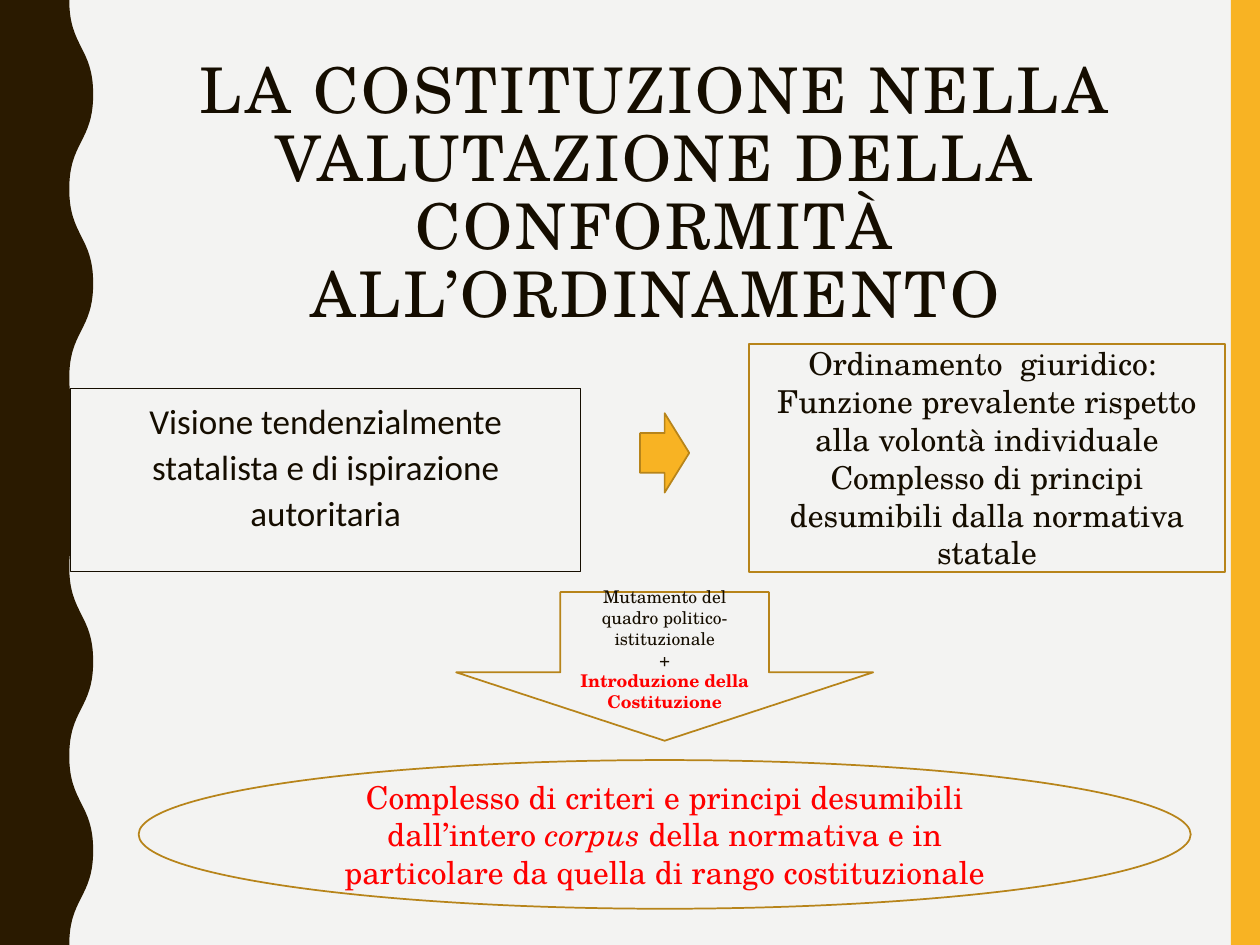
from dataclasses import dataclass
from typing import NamedTuple

from pptx import Presentation
from pptx.dml.color import RGBColor
from pptx.enum.shapes import MSO_SHAPE as Geometry
from pptx.enum.text import MSO_ANCHOR as Anchor, MSO_AUTO_SIZE as AutoSize, PP_ALIGN as Align
from pptx.oxml.ns import qn
from pptx.oxml.xmlchemy import OxmlElement
from pptx.util import Inches, Pt

SLIDE_W, SLIDE_H = Inches(10), Inches(7.5)
SERIF, SANS = "TeX Gyre Schola", "Calibri"
PAPER, INK, BROWN = "F3F3F2", "150D00", "2A1A00"
GOLD, DARK_GOLD, RED = "F8B323", "B7841A", "FF0000"


class Area(NamedTuple):
    """Left, top, width and height in percent of the slide."""
    left: float
    top: float
    width: float
    height: float

    def emu(self) -> list[int]:
        sides = (SLIDE_W, SLIDE_H, SLIDE_W, SLIDE_H)
        return [round(side * share / 100) for side, share in zip(sides, self)]


class Words(NamedTuple):
    text: str
    color: str = INK
    bold: bool = False
    italic: bool = False


@dataclass
class Block:
    geometry: Geometry
    area: Area
    paragraphs: tuple[tuple[Words, ...], ...] = ()
    size: float = 18
    fill: str = PAPER
    adjustments: tuple[float, ...] = ()


BLOCKS = [
    Block(Geometry.RIGHT_ARROW, Area(50.8, 43.73, 3.9, 8.4), fill=GOLD),
    Block(Geometry.RECTANGLE, Area(59.43, 36.37, 37.8, 24.13), (
        (Words("Ordinamento  giuridico: "),),
        (Words("Funzione prevalente rispetto alla volontà individuale"),),
        (Words("Complesso di principi desumibili dalla normativa statale"),),
    )),
    Block(Geometry.DOWN_ARROW, Area(36.2, 62.65, 33.1, 15.73), (
        (Words("Mutamento del quadro politico- istituzionale"),),
        (Words("+"),),
        (Words("Introduzione della Costituzione", RED, bold=True),),
    ), size=10, adjustments=(0.5, 0.46)),
    Block(Geometry.OVAL, Area(11, 80.43, 83.5, 15.73), (
        (Words("Complesso di criteri e principi desumibili dall’intero ", RED),
         Words("corpus ", RED, italic=True),
         Words("della normativa e in particolare da quella di rango costituzionale", RED)),
    )),
]


def rgb(value: str) -> RGBColor:
    return RGBColor.from_string(value)


def paint(shape, fill: str, line: str | None = None, width: float = 1) -> None:
    shape.fill.solid()
    shape.fill.fore_color.rgb = rgb(fill)
    if line:
        shape.line.color.rgb = rgb(line)
        shape.line.width = Pt(width)
    else:
        shape.line.fill.background()


def add_words(paragraph, words: Words, size: float, font: str = SERIF):
    run = paragraph.add_run()
    run.text = words.text
    run.font.name, run.font.size = font, Pt(size)
    run.font.bold, run.font.italic = words.bold, words.italic
    run.font.color.rgb = rgb(words.color)
    return run


def add_block(slide, block: Block) -> None:
    shape = slide.shapes.add_shape(block.geometry, *block.area.emu())
    shape.shadow.inherit = False
    paint(shape, block.fill, DARK_GOLD)
    for index, value in enumerate(block.adjustments):
        shape.adjustments[index] = value
    frame = shape.text_frame
    frame.word_wrap, frame.vertical_anchor = True, Anchor.MIDDLE
    for index, runs in enumerate(block.paragraphs):
        paragraph = frame.add_paragraph() if index else frame.paragraphs[0]
        paragraph.alignment = Align.CENTER
        for words in runs:
            add_words(paragraph, words, block.size)


def fill_placeholder(holder, area: Area, words: Words, size: float, font: str, spacing: float):
    holder.left, holder.top, holder.width, holder.height = area.emu()
    frame = holder.text_frame
    frame.word_wrap, frame.auto_size = True, AutoSize.NONE
    frame.vertical_anchor = Anchor.TOP
    paragraph = frame.paragraphs[0]
    paragraph.alignment, paragraph.line_spacing = Align.CENTER, spacing
    return paragraph, add_words(paragraph, words, size, font)


def add_wave(slide, inner: int = 550, outer: int = 740, swing_h: int = 750, swings: int = 10):
    """Left band whose right edge swings between inner and outer, in 1/1000 inch."""
    knots = [(outer if i % 2 else inner, i * swing_h) for i in range(swings + 1)]
    builder = slide.shapes.build_freeform(*knots[0], scale=Inches(1) / 1000)
    builder.add_line_segments(knots[1:] + [(0, swings * swing_h), (0, 0)], close=True)
    wave = builder.convert_to_shape()

    # Bend each straight swing into an S curve
    straight = list(wave.element.iter(qn("a:lnTo")))
    for line, (x1, y1), (x2, y2) in zip(straight, knots, knots[1:]):
        middle = (y1 + y2) // 2
        curve = OxmlElement("a:cubicBezTo")
        for x, y in ((x1, middle), (x2, middle), (x2, y2)):
            point = OxmlElement("a:pt")
            point.set("x", str(x))
            point.set("y", str(y))
            curve.append(point)
        line.getparent().replace(line, curve)
    return wave


def main() -> None:
    deck = Presentation()
    deck.slide_width, deck.slide_height = SLIDE_W, SLIDE_H
    slide = deck.slides.add_slide(deck.slide_layouts[1])
    slide.background.fill.solid()
    slide.background.fill.fore_color.rgb = rgb(PAPER)
    title, body = slide.shapes.title, slide.placeholders[1]

    # Side bands, behind the placeholders
    gold_band = slide.shapes.add_shape(Geometry.RECTANGLE, *Area(97.7, 0, 2.3, 100).emu())
    for band, color in ((gold_band, GOLD), (add_wave(slide), BROWN)):
        band.shadow.inherit = False
        paint(band, color)
        title.element.addprevious(band.element)

    # Title
    _, heading = fill_placeholder(
        title, Area(10.27, 5.6, 83.5, 21.73),
        Words("LA COSTITUZIONE NELLA VALUTAZIONE DELLA CONFORMITÀ ALL’ORDINAMENTO"),
        36, SERIF, 0.9)
    heading.font._element.set("spc", "150")

    # Earlier view, as body text without a bullet
    paragraph, _ = fill_placeholder(
        body, Area(5.6, 41.12, 40.5, 19.33),
        Words("Visione tendenzialmente statalista e di ispirazione autoritaria"),
        20, SANS, 1.1)
    paint(body, PAPER, INK, 0.75)
    paragraph.space_before = Pt(7)
    properties = paragraph._p.get_or_add_pPr()
    properties.set("marL", "0")
    properties.set("indent", "0")
    properties.append(OxmlElement("a:buNone"))

    # Arrows and the views they lead to
    for block in BLOCKS:
        add_block(slide, block)

    deck.save("out.pptx")


if __name__ == "__main__":
    main()
